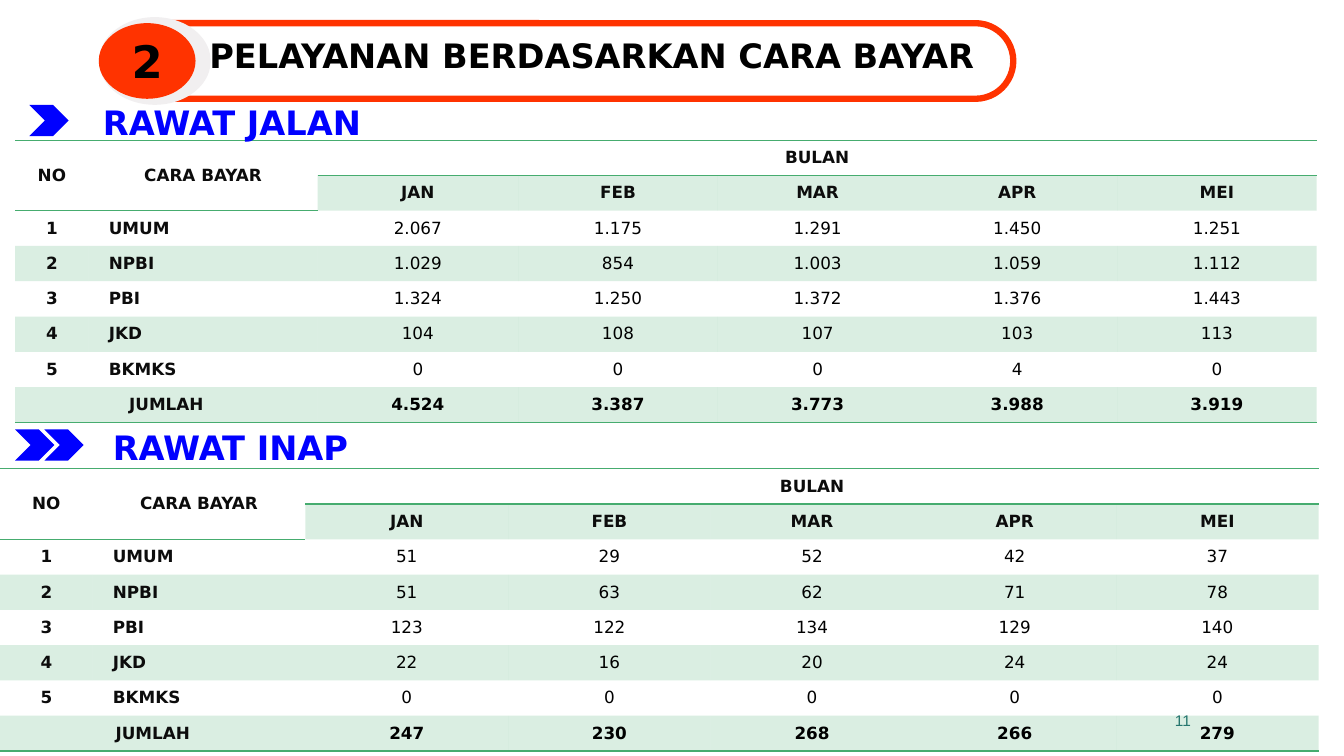
from lxml.etree import SubElement
from pptx import Presentation
from pptx.dml.color import RGBColor
from pptx.enum.shapes import MSO_SHAPE as Shape
from pptx.enum.text import MSO_ANCHOR as Anchor, PP_ALIGN as Align
from pptx.oxml.ns import qn
from pptx.util import Inches, Pt

GREEN = RGBColor(0x46, 0xAC, 0x6F)
INK = RGBColor(0x0C, 0x0C, 0x0C)
BLACK = RGBColor(0x00, 0x00, 0x00)
BLUE = RGBColor(0x00, 0x00, 0xFF)
ORANGE = RGBColor(0xFF, 0x33, 0x00)
PALE_GREY = RGBColor(0xF1, 0xEF, 0xF0)
TEAL = RGBColor(0x1F, 0x69, 0x6F)

FONT = "DejaVu Sans"
NO_STYLE = "{2D5ABB26-0587-4C30-8999-92F81FD0307C}"
ROW_HEIGHT = 0.35
MONTHS = ["JAN", "FEB", "MAR", "APR", "MEI"]
PAYMENTS = ["UMUM", "NPBI", "PBI", "JKD", "BKMKS"]

OUTPATIENTS = [
    ["2.067", "1.175", "1.291", "1.450", "1.251"],
    ["1.029", "854", "1.003", "1.059", "1.112"],
    ["1.324", "1.250", "1.372", "1.376", "1.443"],
    ["104", "108", "107", "103", "113"],
    ["0", "0", "0", "4", "0"],
    ["4.524", "3.387", "3.773", "3.988", "3.919"],
]
INPATIENTS = [
    ["51", "29", "52", "42", "37"],
    ["51", "63", "62", "71", "78"],
    ["123", "122", "134", "129", "140"],
    ["22", "16", "20", "24", "24"],
    ["0", "0", "0", "0", "0"],
    ["247", "230", "268", "266", "279"],
]


def write(frame, text, size, color, bold=True, name=FONT, align=Align.CENTER):
    paragraph = frame.paragraphs[0]
    paragraph.text = text
    paragraph.alignment = align
    font = paragraph.runs[0].font
    formats = {"size": Pt(size), "bold": bold, "name": name}
    for attribute, value in formats.items():
        setattr(font, attribute, value)
    font.color.rgb = color
    return paragraph


def add_text(slide, box, text, size, color, anchor=Anchor.TOP, wrap=True, **style):
    frame = slide.shapes.add_textbox(*map(Inches, box)).text_frame
    frame.word_wrap = wrap
    frame.vertical_anchor = anchor
    return write(frame, text, size, color, **style)


def add_figure(slide, kind, box, fill=None, line=None):
    shape = slide.shapes.add_shape(kind, *map(Inches, box))
    shape.shadow.inherit = False
    if fill is None:
        shape.fill.background()
    else:
        shape.fill.solid()
        shape.fill.fore_color.rgb = fill
    if line is None:
        shape.line.fill.background()
    else:
        shape.line.color.rgb = line
        shape.line.width = Pt(4.5)
    return shape


def add_border(cell, side):
    properties = cell._tc.get_or_add_tcPr()
    line = SubElement(properties, qn(f"a:{side}"), w=str(Pt(1)))
    fill = SubElement(line, qn("a:solidFill"))
    SubElement(fill, qn("a:srgbClr"), val=str(GREEN))


def tint(cell):
    cell.fill.solid()
    cell.fill.fore_color.rgb = GREEN
    color = cell._tc.tcPr.find(qn("a:solidFill")).find(qn("a:srgbClr"))
    SubElement(color, qn("a:alpha"), val="20000")


def format_cell(cell, row, column, text, last_row):
    # Rules around the header and under the total
    if row == 0:
        add_border(cell, "lnT")
    if row in (0, last_row):
        add_border(cell, "lnB")
    # Every second row is tinted, except under the merged headings
    if row % 2 and (row > 1 or column > 1):
        tint(cell)
    else:
        cell.fill.background()

    is_value = row > 1 and column > 1
    side, edge = (0, 0) if is_value else (0.2, 0.07)
    margins = {"margin_left": side, "margin_right": side,
               "margin_top": edge, "margin_bottom": edge}
    for attribute, value in margins.items():
        setattr(cell, attribute, Inches(value))
    cell.vertical_anchor = Anchor.MIDDLE
    if text:
        is_payment = column == 1 and 1 < row < last_row
        write(cell.text_frame, text, 12, BLACK if is_value else INK,
              bold=not is_value or row == last_row,
              align=Align.LEFT if is_payment else Align.CENTER)


def add_payment_table(slide, left, top, widths, values):
    rows = [["NO", "CARA BAYAR", "BULAN", "", "", "", ""], ["", ""] + MONTHS]
    for number, (payment, counts) in enumerate(zip(PAYMENTS, values), 1):
        rows.append([str(number), payment] + counts)
    rows.append(["JUMLAH", ""] + values[-1])
    last_row = len(rows) - 1

    graphic = slide.shapes.add_table(
        len(rows), len(widths), Inches(left), Inches(top),
        Inches(sum(widths)), Inches(ROW_HEIGHT * len(rows)))
    table = graphic.table
    table.first_row = table.horz_banding = False
    for style in graphic.element.iter(qn("a:tableStyleId")):
        style.text = NO_STYLE
    for column, width in zip(table.columns, widths):
        column.width = Inches(width)
    for row in table.rows:
        row.height = Inches(ROW_HEIGHT)

    # Merged headings and total label
    for start, end in [((0, 0), (1, 0)), ((0, 1), (1, 1)),
                       ((0, 2), (0, 6)), ((last_row, 0), (last_row, 1))]:
        table.cell(*start).merge(table.cell(*end))
    for row, texts in enumerate(rows):
        for column, text in enumerate(texts):
            format_cell(table.cell(row, column), row, column, text, last_row)


def add_title(slide):
    banner = add_figure(slide, Shape.ROUNDED_RECTANGLE, (1.1, 0.23, 8.95, 0.75), line=ORANGE)
    banner.adjustments[0] = 0.5
    add_figure(slide, Shape.OVAL, (0.98, 0.17, 1.11, 0.87), PALE_GREY)
    badge = add_figure(slide, Shape.OVAL, (0.98, 0.23, 0.96, 0.75), ORANGE)
    badge.text_frame.vertical_anchor = Anchor.MIDDLE
    write(badge.text_frame, "2", 32, BLACK)
    title = add_text(slide, (1.57, 0.05, 8.6, 0.75), "PELAYANAN BERDASARKAN CARA BAYAR",
                     24, BLACK, Anchor.BOTTOM)
    title.line_spacing = 0.9


def add_section(slide, text, box, chevron_lefts, chevron_top):
    for left in chevron_lefts:
        add_figure(slide, Shape.CHEVRON, (left, chevron_top, 0.39, 0.31), BLUE)
    add_text(slide, box, text, 24, BLUE, wrap=False)


def main():
    presentation = Presentation()
    presentation.slide_width = Inches(13.33)
    presentation.slide_height = Inches(7.5)
    slide = presentation.slides.add_slide(presentation.slide_layouts[6])

    # Outpatient table and page number
    add_payment_table(slide, 0.15, 1.39, [0.73, 2.27, 1.99] + [1.98] * 4, OUTPATIENTS)
    add_text(slide, (8.8, 6.95, 3.11, 0.4), "11", 11, TEAL, Anchor.MIDDLE,
             bold=False, name="Arial", align=Align.RIGHT)

    # Title and section headings
    add_title(slide)
    add_section(slide, "RAWAT JALAN", (0.84, 0.96, 2.92, 0.5), [0.29], 1.04)
    add_section(slide, "RAWAT INAP", (0.94, 4.19, 2.69, 0.5), [0.15, 0.44], 4.26)

    # Inpatient table
    add_payment_table(slide, 0, 4.65, [0.92, 2.11] + [2.01] * 5, INPATIENTS)
    presentation.save("out.pptx")


if __name__ == "__main__":
    main()
